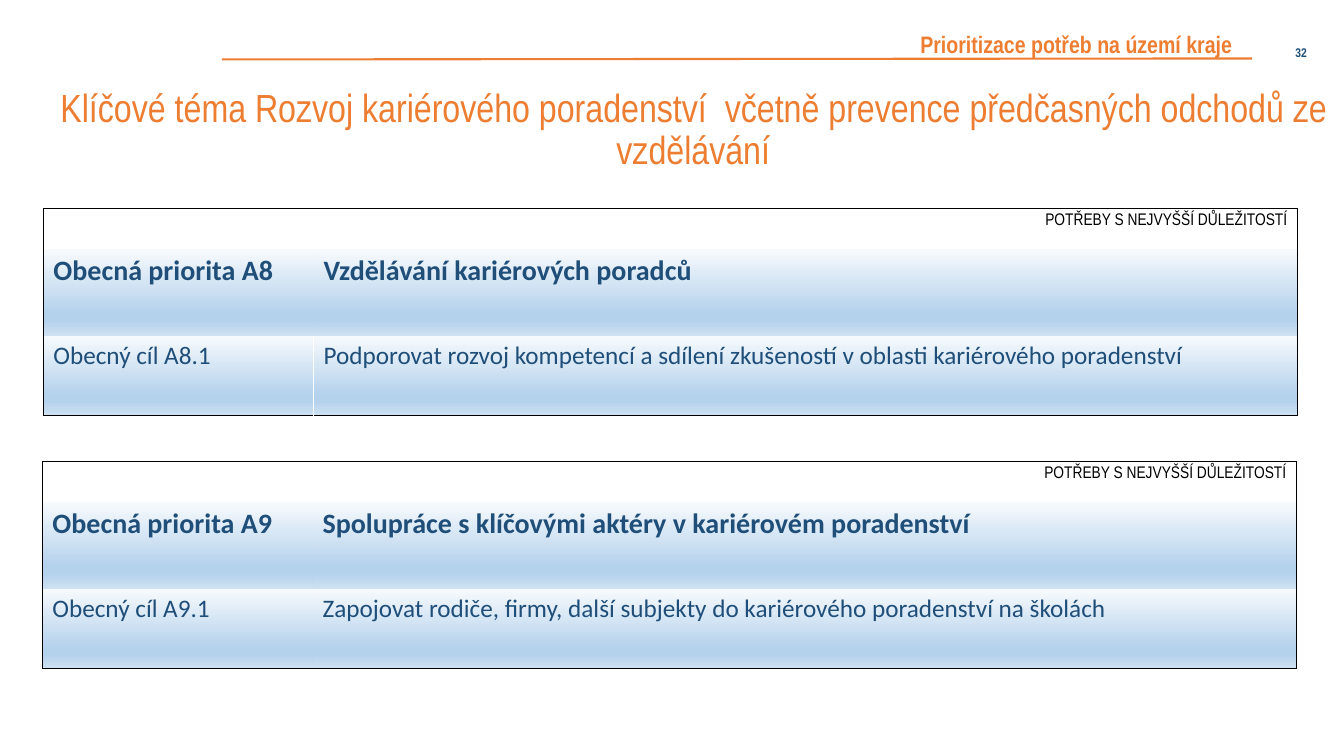
"""Build the slide on career guidance priorities."""
from dataclasses import dataclass

from lxml import etree
from pptx import Presentation
from pptx.dml.color import RGBColor
from pptx.enum.shapes import MSO_CONNECTOR
from pptx.enum.text import MSO_ANCHOR, PP_ALIGN
from pptx.oxml.ns import qn
from pptx.util import Inches, Pt

LEFT, CENTER, RIGHT = PP_ALIGN.LEFT, PP_ALIGN.CENTER, PP_ALIGN.RIGHT
MIDDLE, BOTTOM = MSO_ANCHOR.MIDDLE, MSO_ANCHOR.BOTTOM
STRAIGHT = MSO_CONNECTOR.STRAIGHT
COLORS = {"orange": "ED7D31", "navy": "1F4E79", "black": "000000", "white": "FFFFFF"}
SHADES = ((0, "F7FAFD"), (74, "B5D2EC"), (83, "B5D2EC"), (100, "CEE1F2"))
NARROW, BODY = "Arial Narrow", "Calibri"
COLS = (2.68, 9.76)
ROWS = (0.4, 0.86, 0.79)
HEADING = "POTŘEBY S NEJVYŠŠÍ DŮLEŽITOSTÍ"


@dataclass
class Label:
    """A text box with its place and format."""
    text: str
    box: tuple[float, float, float, float]
    anchor: MSO_ANCHOR
    style: dict


@dataclass
class Panel:
    """A table of one priority and its goal."""
    left: float
    top: float
    code: str
    title: str
    goal: str
    split: bool = False


LABELS = (
    Label("Klíčové téma Rozvoj kariérového poradenství  včetně prevence "
          "předčasných odchodů ze vzdělávání", (0.42, 0.98, 12.91, 0.63), MIDDLE,
          dict(size=28, color="orange", align=CENTER, spacing=0.9)),
    Label("32", (12.27, 0.32, 0.79, 0.4), MIDDLE,
          dict(size=9, color="navy", bold=True, align=RIGHT)),
    Label("Prioritizace potřeb na území kraje", (9.03, 0.32, 3.38, 0.31), BOTTOM,
          dict(size=17, color="orange", bold=True, spacing=0.9)),
)
PANELS = (
    Panel(0.43, 2.07, "A8", "Vzdělávání kariérových poradců",
          "Podporovat rozvoj kompetencí a sdílení zkušeností v\u00a0oblasti "
          "kariérového poradenství", split=True),
    Panel(0.42, 4.58, "A9", "Spolupráce s\u00a0klíčovými aktéry v kariérovém poradenství",
          "Zapojovat rodiče, firmy, další subjekty do kariérového poradenství na školách"),
)


def write(frame, text: str, *, size: float, color: str, font: str = NARROW,
          bold: bool = False, align: PP_ALIGN = LEFT, spacing: float = 1.0) -> None:
    """Put formatted text into a text frame."""
    para = frame.paragraphs[0]
    para.alignment, para.line_spacing = align, spacing
    run = para.add_run()
    run.text = text
    run.font.name, run.font.size, run.font.bold = font, Pt(size), bold
    run.font.color.rgb = RGBColor.from_string(COLORS[color])


def add_label(slide, label: Label) -> None:
    """Draw one text box."""
    frame = slide.shapes.add_textbox(*map(Inches, label.box)).text_frame
    frame.word_wrap = True
    frame.vertical_anchor = label.anchor
    write(frame, label.text, **label.style)


def add_edge(props, side: str, color: str | None) -> None:
    """Set one cell border, or clear it when no colour is given."""
    line = etree.SubElement(props, qn(f"a:ln{side}"), w=str(Pt(1)))
    if color:
        fill = etree.SubElement(line, qn("a:solidFill"))
        etree.SubElement(fill, qn("a:srgbClr"), val=COLORS[color])
    else:
        etree.SubElement(line, qn("a:noFill"))


def add_shade(props) -> None:
    """Fill a cell with the downward blue gradient."""
    grad = etree.SubElement(props, qn("a:gradFill"), rotWithShape="1")
    stops = etree.SubElement(grad, qn("a:gsLst"))
    for place, color in SHADES:
        stop = etree.SubElement(stops, qn("a:gs"), pos=str(place * 1000))
        etree.SubElement(stop, qn("a:srgbClr"), val=color)
    etree.SubElement(grad, qn("a:lin"), ang="5400000", scaled="0")


def style_cell(cell, row: int, col: int, split: bool) -> None:
    """Give a cell the outer frame, the inner split and its fill."""
    props = cell._tc.get_or_add_tcPr()
    inner = "white" if split and row == 2 else None
    edges = {"L": "black" if col == 0 else inner,
             "R": "black" if col == 1 else inner,
             "T": "black" if row == 0 else None,
             "B": "black" if row == 2 else None}
    for side, color in edges.items():
        add_edge(props, side, color)
    if row:
        add_shade(props)
    else:
        cell.fill.background()


def add_panel(slide, panel: Panel) -> None:
    """Draw one priority table."""
    table = slide.shapes.add_table(
        len(ROWS), len(COLS), Inches(panel.left), Inches(panel.top),
        Inches(sum(COLS)), Inches(sum(ROWS))).table
    table.first_row = table.horz_banding = False
    for col, width in zip(table.columns, COLS):
        col.width = Inches(width)
    for row, height in zip(table.rows, ROWS):
        row.height = Inches(height)
    texts = (("", HEADING),
             (f"Obecná priorita {panel.code}", panel.title),
             (f"Obecný cíl {panel.code}.1", panel.goal))
    styles = (dict(size=12, color="black", align=RIGHT),
              dict(size=20, color="navy", font=BODY, bold=True),
              dict(size=18, color="navy", font=BODY))
    for row, (pair, style) in enumerate(zip(texts, styles)):
        for col, text in enumerate(pair):
            cell = table.cell(row, col)
            style_cell(cell, row, col, panel.split)
            if text:
                write(cell.text_frame, text, **style)


def add_rule(slide) -> None:
    """Draw the line under the running head."""
    rule = slide.shapes.add_connector(
        STRAIGHT, Inches(2.2), Inches(0.59), Inches(12.42), Inches(0.58))
    rule.line.color.rgb = RGBColor.from_string(COLORS["orange"])
    rule.line.width = Pt(1.5)
    etree.SubElement(rule._element.spPr, qn("a:effectLst"))


def main() -> None:
    """Build and save the slide."""
    deck = Presentation()
    deck.slide_width, deck.slide_height = Inches(13.33), Inches(7.5)
    slide = deck.slides.add_slide(deck.slide_layouts[6])
    add_rule(slide)
    for label in LABELS:
        add_label(slide, label)
    for panel in PANELS:
        add_panel(slide, panel)
    deck.save("out.pptx")


if __name__ == "__main__":
    main()
